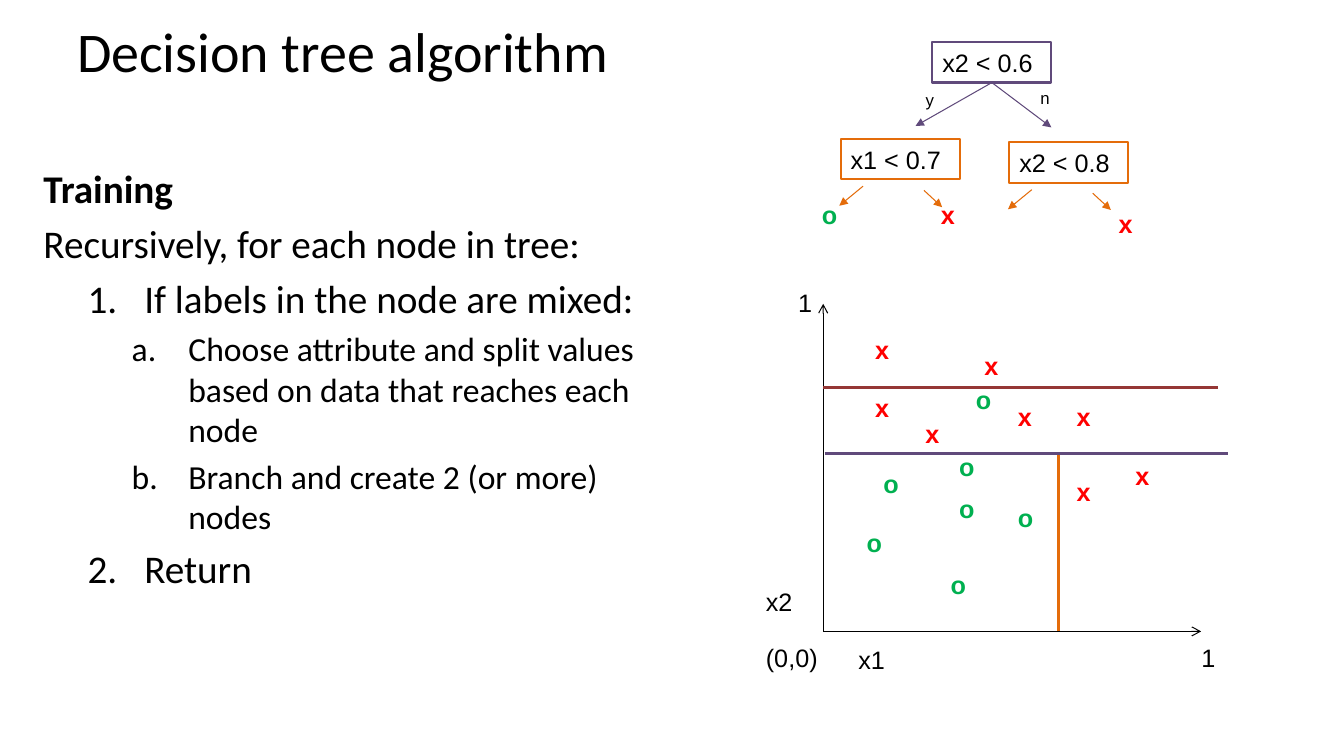
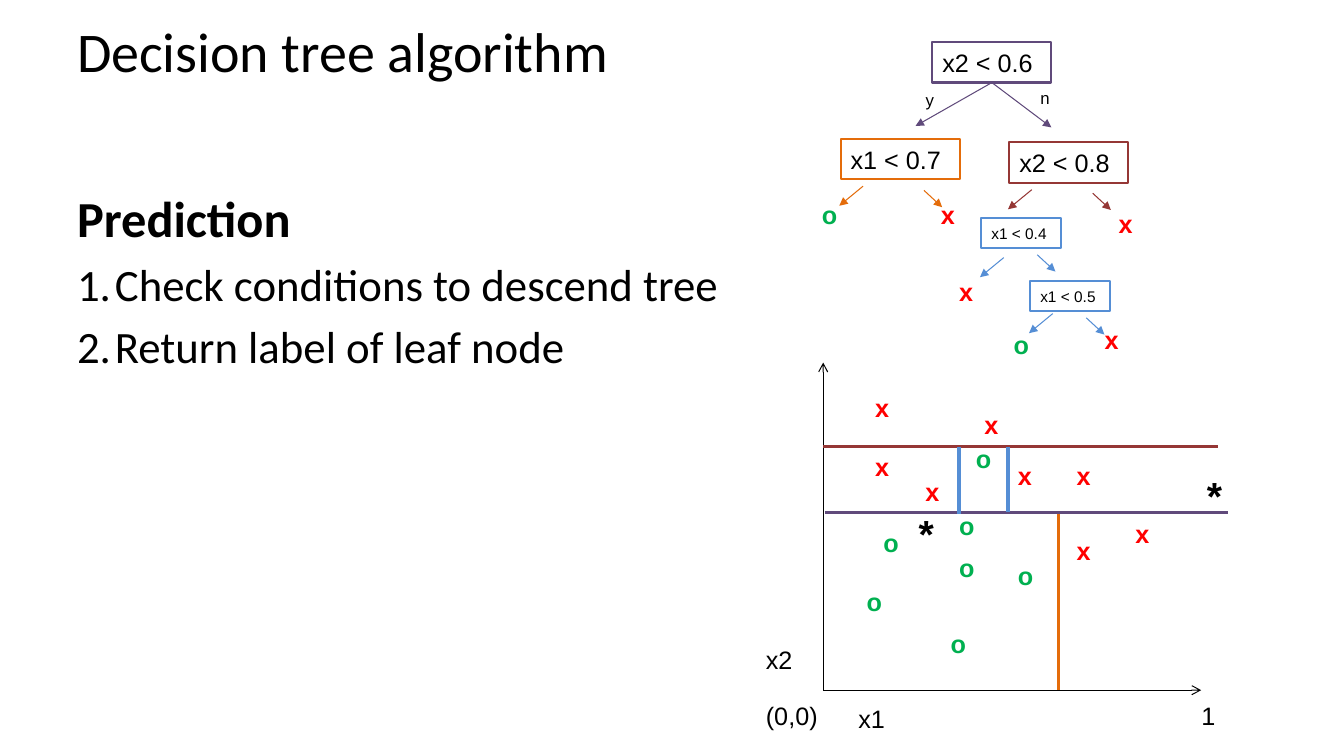
import pptx
import pptx.dml.color
import pptx.enum.shapes
import pptx.enum.text
import pptx.oxml.ns
import pptx.util
from lxml import etree

Pt = pptx.util.Pt
qn = pptx.oxml.ns.qn

BLACK, RED, GREEN = "000000", "FF0000", "00B050"
PURPLE, ORANGE, BROWN, BLUE = "604A7B", "E46C0A", "953735", "558ED5"
CLASS_COLOURS = {"x": RED, "o": GREEN}
CLASS_WIDTHS = {"x": 24.5, "o": 26}

# Offsets from the plot's origin: rightwards, upwards
SAMPLES = {
    "x": [(132, 168), (174, 168), (174, 114), (216, 126),
          (30, 216), (30, 174), (108, 204), (66, 156)],
    "o": [(102, 180), (132, 96), (24, 78), (36, 120),
          (84, 48), (90, 102), (90, 132)],
}
SPLITS = [
    (1, 127, 289, 127, PURPLE),
    (0, 174, 282, 174, BROWN),
    (168, 126, 168, 0, ORANGE),
]
DEEP_SPLITS = [(97, 174, 97, 126, BLUE), (132, 174, 132, 127, BLUE)]
AXIS_LABELS = [("x2", -48, 36, 34), ("x1", 18, -6, 34),
               ("(0,0)", -48, -4, 52), ("1", 263, -4, 24.5)]


def colour(hex_string):
    return pptx.dml.color.RGBColor.from_string(hex_string)


def write(paragraph, text, size=18, font="Arial", color=BLACK, bold=False, before=0):
    paragraph.space_before = Pt(before)
    paragraph.alignment = pptx.enum.text.PP_ALIGN.LEFT
    run = paragraph.add_run()
    run.text = text
    run.font.size = Pt(size)
    run.font.name = font
    run.font.bold = bold
    run.font.color.rgb = colour(color)


def number(paragraph, scheme, margin, hang):
    properties = paragraph._p.get_or_add_pPr()
    properties.set("marL", str(Pt(margin)))
    properties.set("indent", str(-Pt(hang)))
    etree.SubElement(properties, qn("a:buFont"), typeface="+mj-lt")
    etree.SubElement(properties, qn("a:buAutoNum"), type=scheme)


class Deck:
    """Style of the presentation and the slide being filled."""

    heading_font = "Calibri"
    node_size = (85, 29)
    small_node_size = (57, 21)

    def __init__(self):
        self.presentation = pptx.Presentation()
        self.presentation.slide_width = Pt(960)
        self.presentation.slide_height = Pt(540)
        self.slide = None

    def new_slide(self, title):
        self.slide = self.presentation.slides.add_slide(self.presentation.slide_layouts[6])
        frame = self.frame(48, 0, 480, 72, wrap=True)
        frame.vertical_anchor = pptx.enum.text.MSO_ANCHOR.MIDDLE
        write(frame.paragraphs[0], title, size=40, font=self.heading_font)

    def frame(self, left, top, width, height, wrap=False):
        box = self.slide.shapes.add_textbox(Pt(left), Pt(top), Pt(width), Pt(height))
        box.text_frame.word_wrap = wrap
        return box.text_frame

    def label(self, text, left, top, width, size=18, **style):
        frame = self.frame(left, top, width, size * 1.2 + 7.2)
        write(frame.paragraphs[0], text, size=size, **style)

    def sample(self, kind, left, top):
        self.label(kind, left, top, CLASS_WIDTHS[kind], color=CLASS_COLOURS[kind], bold=True)

    def body(self, left, top, width, height, items):
        """items: text, size, bold, level, numbering (scheme, margin, hang) or None."""
        frame = self.frame(left, top, width, height, wrap=True)
        for index, (text, size, bold, level, numbering) in enumerate(items):
            paragraph = frame.add_paragraph() if index else frame.paragraphs[0]
            paragraph.level = level
            before = size * 0.2 if index else 0
            if numbering:
                paragraph.space_before = Pt(before)
                number(paragraph, *numbering)
            write(paragraph, text, size=size, font=self.heading_font, bold=bold, before=before)

    def line(self, x1, y1, x2, y2, color=BLACK, width=0.75, head=None):
        connector = self.slide.shapes.add_connector(
            pptx.enum.shapes.MSO_CONNECTOR.STRAIGHT, Pt(x1), Pt(y1), Pt(x2), Pt(y2))
        connector.line.color.rgb = colour(color)
        connector.line.width = Pt(width)
        if head:
            etree.SubElement(connector.line._get_or_add_ln(), qn("a:tailEnd"), type=head)
        etree.SubElement(connector._element.spPr, qn("a:effectLst"))
        return connector

    def node(self, test, left, top, color, small=False):
        width, height = self.small_node_size if small else self.node_size
        box = self.slide.shapes.add_shape(
            pptx.enum.shapes.MSO_SHAPE.RECTANGLE, Pt(left), Pt(top), Pt(width), Pt(height))
        box.shadow.inherit = False
        box.fill.background()
        box.line.color.rgb = colour(color)
        box.line.width = Pt(1.5)
        box.text_frame.word_wrap = True
        write(box.text_frame.paragraphs[0], test, size=11 if small else 18)
        return box

    def branching_node(self, test, left, top, color, gaps, small=False):
        """Node with two short arrows that start the given gaps below it."""
        self.node(test, left, top, color, small)
        width, height = self.small_node_size if small else self.node_size
        for x, gap, dx, dy in ((left + 16, gaps[0], -17, 14),
                               (left + width * 0.7, gaps[1], 13, 12)):
            y = top + height + gap
            self.line(x, y, x + dx, y + dy, color, head="triangle")

    def tree(self, right_color):
        root = self.node("x2 < 0.6", 666, 30, PURPLE)
        for answer, left, top, end_x, end_y in (("y", 654, 60.5, 654, 90),
                                                ("n", 736, 59, 751, 91)):
            arrow = self.line(708.5, 59, end_x, end_y, PURPLE, head="triangle")
            arrow.begin_connect(root, 2)
            self.label(answer, left, top, 21, size=12)
        self.branching_node("x1 < 0.7", 600.5, 99, ORANGE, (5, 8))
        self.branching_node("x2 < 0.8", 721, 101.5, right_color, (5, 7.5))
        for leaf in (("o", 580, 139), ("x", 665, 139), ("x", 792, 145)):
            self.sample(*leaf)

    def subtree(self):
        self.branching_node("x1 < 0.4", 701, 156, BLUE, (7, 5), small=True)
        self.branching_node("x1 < 0.5", 736, 201, BLUE, (2, 5), small=True)
        for leaf in (("x", 678, 194), ("x", 782, 228), ("o", 717, 232)):
            self.sample(*leaf)

    def plot(self, origin_y, splits, labels):
        origin_x = 588
        for kind, places in SAMPLES.items():
            for dx, dy in places:
                self.sample(kind, origin_x + dx, origin_y - dy)
        for dx, dy in ((0, 234), (270, 0)):
            self.line(origin_x, origin_y, origin_x + dx, origin_y - dy, head="arrow")
        for x1, y1, x2, y2, color in splits:
            self.line(origin_x + x1, origin_y - y1, origin_x + x2, origin_y - y2,
                      color, width=2.25)
        for text, dx, dy, width in labels:
            self.label(text, origin_x + dx, origin_y - dy, width)


def main():
    deck = Deck()
    title = "Decision tree algorithm"

    deck.new_slide(title)
    step = ("arabicPeriod", 72, 40.5)
    substep = ("alphaLcPeriod", 103.5, 40.5)
    deck.body(24, 114, 474, 354, [
        ("Training", 28, True, 0, None),
        ("Recursively, for each node in tree:", 28, False, 0, None),
        ("If labels in the node are mixed:", 28, False, 1, step),
        ("Choose attribute and split values based on data that reaches each node",
         24, False, 2, substep),
        ("Branch and create 2 (or more) nodes", 24, False, 2, substep),
        ("Return", 28, False, 1, step),
    ])
    deck.tree(right_color=ORANGE)
    deck.plot(451, SPLITS, AXIS_LABELS + [("1", -25, 249, 24.5)])

    deck.new_slide(title)
    step = ("arabicPeriod", 27, 27)
    deck.body(48, 130, 490, 352, [
        ("Prediction", 36, True, 0, None),
        ("Check conditions to descend tree", 32, False, 0, step),
        ("Return label of leaf node", 32, False, 0, step),
    ])
    deck.tree(right_color=BROWN)
    deck.subtree()
    deck.plot(493, SPLITS + DEEP_SPLITS, AXIS_LABELS)
    for left, top in ((855, 333), (649, 360)):
        deck.label("*", left, top, 26, size=28, bold=True)

    deck.presentation.save("out.pptx")


if __name__ == "__main__":
    main()
